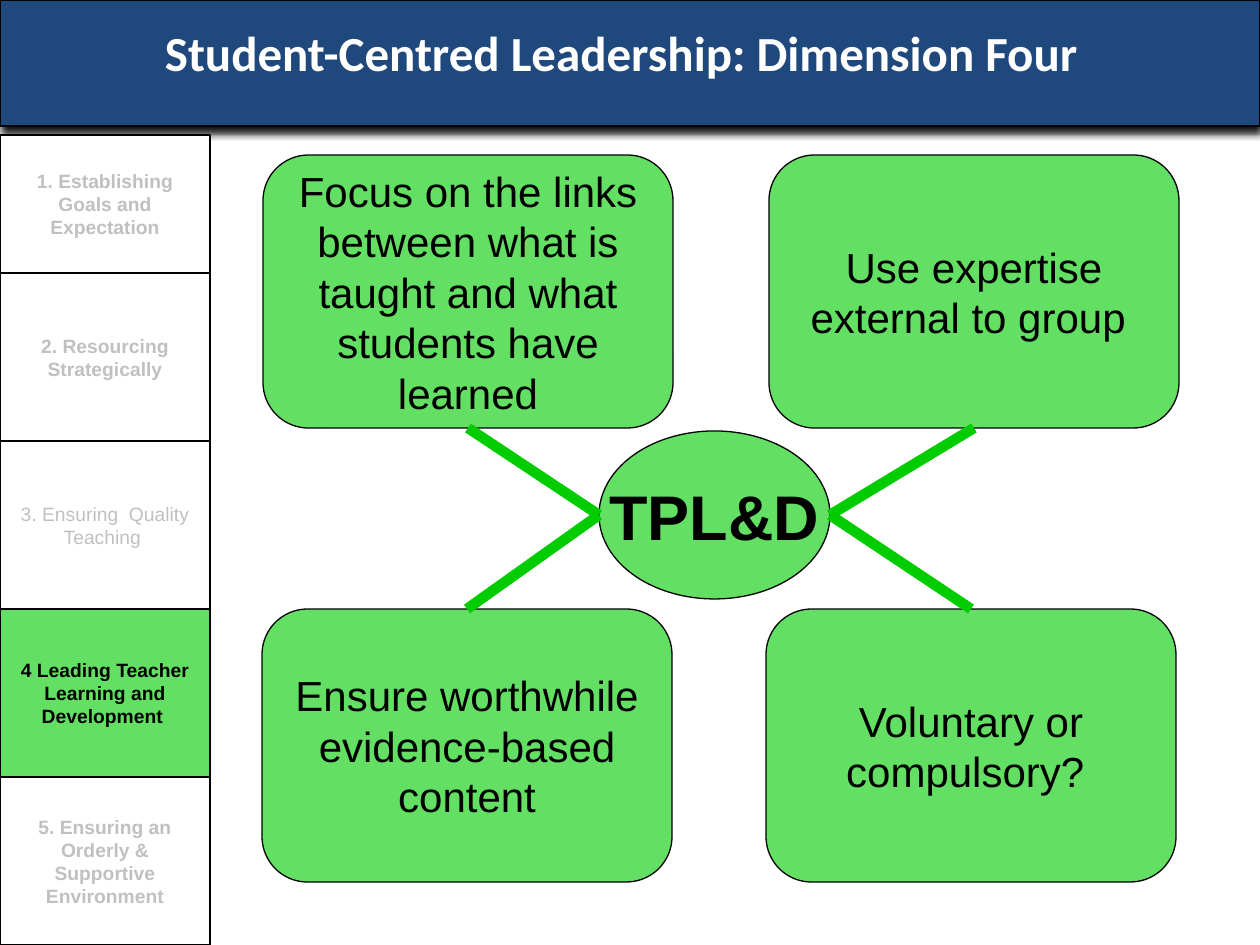
from lxml.etree import SubElement
from pptx import Presentation
from pptx.dml.color import RGBColor
from pptx.enum.shapes import MSO_CONNECTOR, MSO_SHAPE
from pptx.enum.text import MSO_ANCHOR, PP_ALIGN
from pptx.oxml.ns import qn
from pptx.util import Pt

SCALE = 914400 / 126
NAVY = RGBColor(0x1F, 0x49, 0x7D)
GREEN = RGBColor(0x00, 0xCC, 0x00)
GREY = RGBColor(0xC0, 0xC0, 0xC0)
BLACK = RGBColor(0, 0, 0)
WHITE = RGBColor(255, 255, 255)

TAB = {"name": "Arial", "size": Pt(11), "bold": True}
CARD = {"name": "Arial", "size": Pt(24), "bold": False}
HUB = {"name": "Arial", "size": Pt(36), "bold": True}
TITLE = {"name": "Calibri", "size": Pt(28), "bold": True}

deck = Presentation()
deck.slide_width, deck.slide_height = round(1260 * SCALE), round(945 * SCALE)
slide = deck.slides.add_slide(deck.slide_layouts[6])


def write(shape, text, style, color):
    """Put one centred paragraph into the shape."""
    frame = shape.text_frame
    frame.word_wrap = True
    para = frame.paragraphs[0]
    para.alignment = PP_ALIGN.CENTER
    run = para.add_run()
    run.text = text
    for name, value in style.items():
        setattr(run.font, name, value)
    run.font.color.rgb = color
    return para


def draw(kind, box, fill):
    """Add an outlined shape; green ones are partly see-through."""
    shape = slide.shapes.add_shape(kind, *[round(n * SCALE) for n in box])
    shape.shadow.inherit = False
    shape.fill.solid()
    shape.fill.fore_color.rgb = fill
    shape.line.color.rgb = BLACK
    shape.line.width = Pt(0.75)
    shape.text_frame.vertical_anchor = MSO_ANCHOR.MIDDLE
    if fill == GREEN:
        tint = shape.fill._xPr.find(".//" + qn("a:srgbClr"))
        SubElement(tint, qn("a:alpha"), val="61000")
    return shape


# Title bar with its shadow
bar = draw(MSO_SHAPE.FLOWCHART_PROCESS, (0, 0, 1260, 126), NAVY)
effects = bar._element.spPr.find(qn("a:effectLst"))
shade = SubElement(effects, qn("a:outerShdw"), blurRad=str(Pt(4)),
                   dist=str(Pt(4)), dir="5400000", rotWithShape="0")
tone = SubElement(shade, qn("a:srgbClr"), val="000000")
SubElement(tone, qn("a:alpha"), val="90000")

# Side tabs, the fourth one active
tabs = [
    "1. Establishing Goals and Expectation",
    "2. Resourcing Strategically",
    "3. Ensuring  Quality Teaching ",
    "4 Leading Teacher Learning and Development ",
    "5. Ensuring an Orderly & Supportive Environment",
]
edges = [135, 273, 441, 609, 777, 945]
for num, text in enumerate(tabs, 1):
    top, end = edges[num - 1:num + 1]
    live = num == 4
    tab = draw(MSO_SHAPE.FLOWCHART_PROCESS, (0, top, 210, end - top),
               GREEN if live else WHITE)
    write(tab, text, TAB | {"bold": num != 3}, BLACK if live else GREY)
    if live:
        for side, gap in {"left": 2, "top": 1, "right": 2, "bottom": 1}.items():
            setattr(tab.text_frame, "margin_" + side, round(gap * SCALE))

# Hub and the four cards around it
hub = draw(MSO_SHAPE.OVAL, (599, 431, 231, 168), GREEN)
write(hub, "TPL&D", HUB, BLACK)
hub.text_frame.word_wrap = False

cards = [
    (263, 155, "Focus on the links between what is taught and what students have learned"),
    (769, 155, "Use expertise external to group "),
    (262, 609, "Ensure worthwhile evidence-based content"),
    (766, 609, "Voluntary or compulsory? "),
]
for left, top, text in cards:
    card = draw(MSO_SHAPE.FLOWCHART_ALTERNATE_PROCESS, (left, top, 410, 273), GREEN)
    write(card, text, CARD, BLACK).space_before = Pt(5)

# Spokes from the sides of the hub to the near edge of each card
for left, top, text in cards:
    start = (599 if left < 599 else 830, 515)
    stop = (left + 205, top + 273 if top < 431 else top)
    spoke = slide.shapes.add_connector(
        MSO_CONNECTOR.STRAIGHT, *[round(n * SCALE) for n in start + stop])
    spoke.line.color.rgb = GREEN
    spoke.line.width = Pt(6)
    SubElement(spoke._element.spPr, qn("a:effectLst"))

title = slide.shapes.add_textbox(*[round(n * SCALE) for n in (54, 16, 1134, 158)])
write(title, "Student-Centred Leadership: Dimension Four", TITLE, WHITE)

deck.save("out.pptx")
